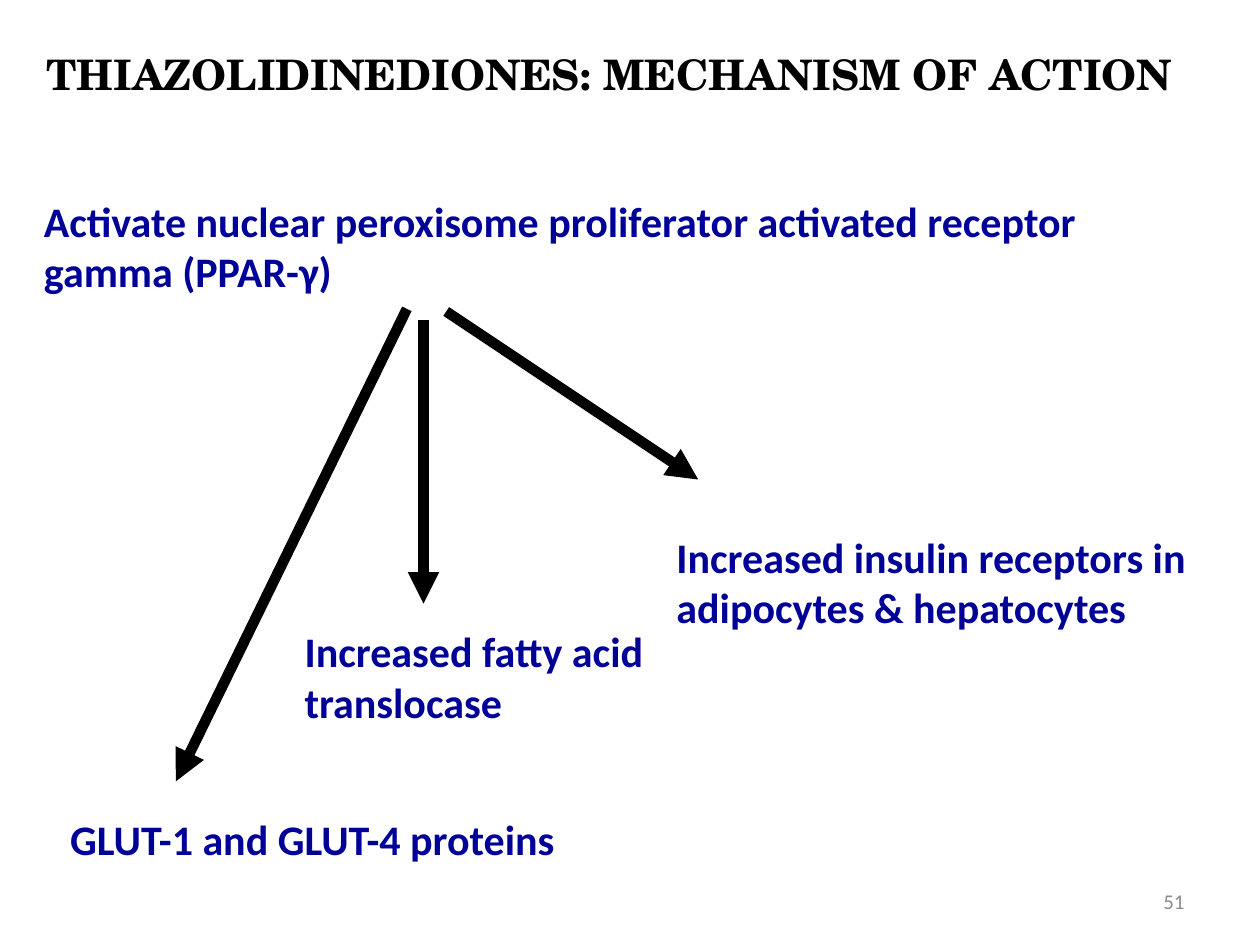
from lxml.etree import SubElement
from pptx import Presentation
from pptx.dml.color import RGBColor
from pptx.enum.shapes import MSO_CONNECTOR
from pptx.enum.text import MSO_ANCHOR, PP_ALIGN
from pptx.oxml.ns import qn
from pptx.util import Pt

BLACK = RGBColor(0x00, 0x00, 0x00)
NAVY = RGBColor(0x00, 0x00, 0x99)
GREY = RGBColor(0x8C, 0x8C, 0x8C)


class DiagramSlide:
    body_font = "Calibri"
    title_font = "TeX Gyre Schola"
    body_size = 24
    arrow_weight = 6

    def __init__(self, slide):
        self.slide = slide

    def text(self, wording, box, *, font=body_font, size=body_size, color=NAVY,
             bold=True, align=PP_ALIGN.LEFT, anchor=MSO_ANCHOR.TOP):
        """Place wording in box, given as left, top, width, height in points."""
        frame = self.slide.shapes.add_textbox(*map(Pt, box)).text_frame
        frame.word_wrap = True
        frame.vertical_anchor = anchor
        paragraph = frame.paragraphs[0]
        paragraph.alignment = align
        run = paragraph.add_run()
        run.text = wording
        run.font.name = font
        run.font.size = Pt(size)
        run.font.bold = bold
        run.font.color.rgb = color

    def title(self, wording, box):
        self.text(wording, box, font=self.title_font, color=BLACK)

    def page_number(self, number, box):
        self.text(str(number), box, size=12, color=GREY, bold=False,
                  align=PP_ALIGN.RIGHT, anchor=MSO_ANCHOR.MIDDLE)

    def arrow(self, start, end):
        arrow = self.slide.shapes.add_connector(
            MSO_CONNECTOR.STRAIGHT, *map(Pt, (*start, *end)))
        arrow.line.color.rgb = BLACK
        arrow.line.width = Pt(self.arrow_weight)
        SubElement(arrow.line._get_or_add_ln(), qn("a:tailEnd"), type="triangle")
        SubElement(arrow._element.spPr, qn("a:effectLst"))


def main():
    deck = Presentation()
    deck.slide_width, deck.slide_height = Pt(720), Pt(540)
    mechanism = DiagramSlide(deck.slides.add_slide(deck.slide_layouts[6]))

    mechanism.title("THIAZOLIDINEDIONES: MECHANISM OF ACTION",
                    (19.5, 24, 682, 36))
    mechanism.text("Activate nuclear peroxisome proliferator activated receptor "
                   "gamma (PPAR-γ)", (18, 108, 666, 65.5))

    effects = [
        ("Increased insulin receptors in adipocytes & hepatocytes",
         (379.5, 300, 310.5, 65.5), (255, 178), (399, 274)),
        ("GLUT-1 and GLUT-4 proteins",
         (33, 461.5, 300, 36), (232.5, 176.5), (100.5, 446.5)),
        ("Increased fatty acid translocase",
         (167, 354, 212.5, 65.5), (242, 183), (242, 345)),
    ]
    for effect, box, start, end in effects:
        mechanism.arrow(start, end)
        mechanism.text(effect, box)

    mechanism.page_number(51, (516, 500.5, 168, 28.75))
    deck.save("out.pptx")


if __name__ == "__main__":
    main()
